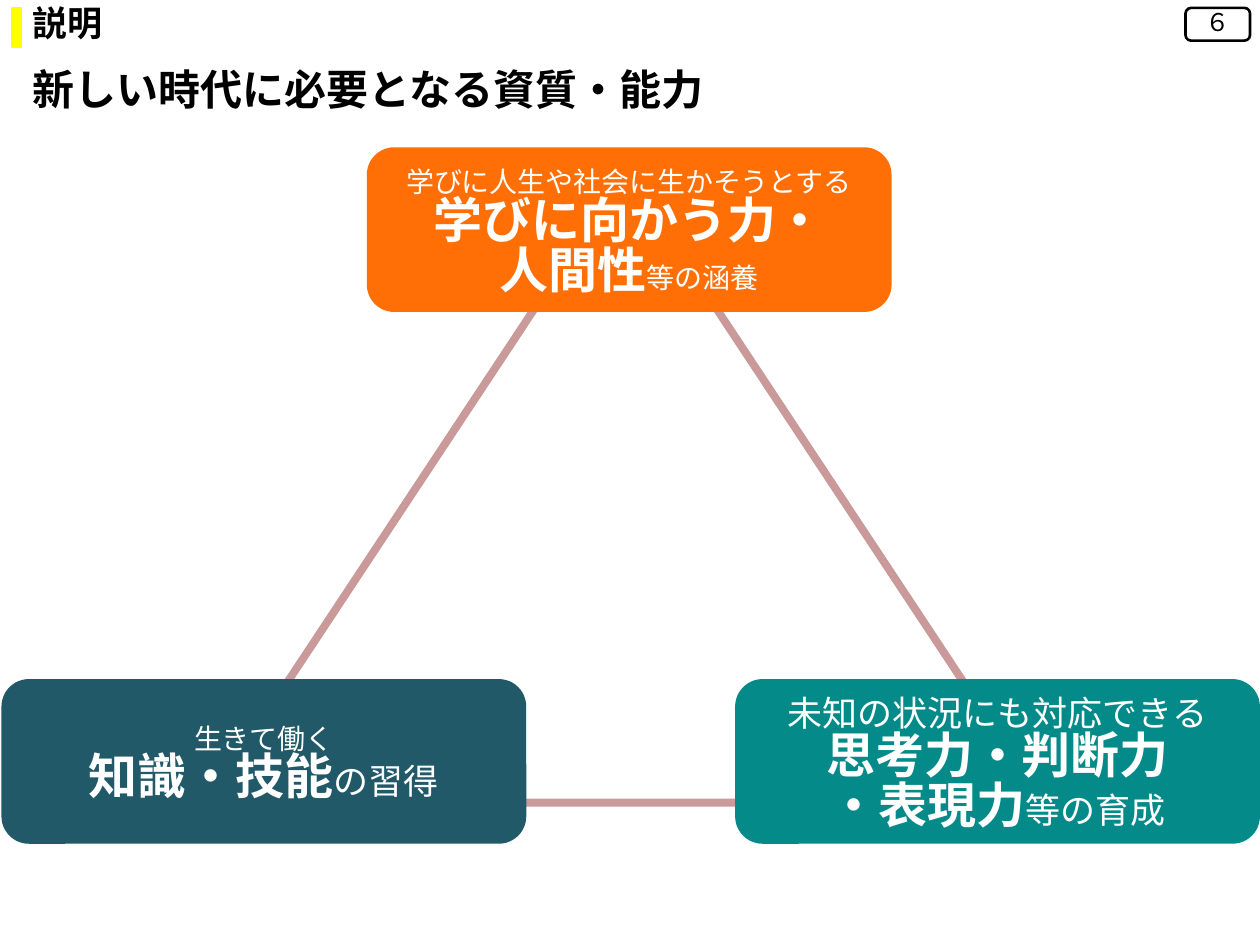
import lxml.etree
import pptx
import pptx.dml.color
import pptx.enum.shapes
import pptx.enum.text
import pptx.oxml.ns
import pptx.util

FONT = "Noto Sans CJK JP"
LINE_SPACING = 0.85
CARD_WIDTH, CARD_HEIGHT = 10.58, 3.32
SHAPES = pptx.enum.shapes.MSO_SHAPE
ANCHOR = pptx.enum.text.MSO_ANCHOR
ALIGN = pptx.enum.text.PP_ALIGN
Cm = pptx.util.Cm
qn = pptx.oxml.ns.qn


def color(hex_value):
    """Return an RGB colour for a hex string."""
    return pptx.dml.color.RGBColor.from_string(hex_value)


def write(frame, paragraphs, hex_value, align, anchor):
    """Fill a text frame with paragraphs of (text, size, bold) runs."""
    frame.word_wrap = True
    frame.auto_size = pptx.enum.text.MSO_AUTO_SIZE.NONE
    frame.vertical_anchor = anchor
    for index, runs in enumerate(paragraphs):
        paragraph = frame.add_paragraph() if index else frame.paragraphs[0]
        paragraph.alignment = align
        paragraph.line_spacing = LINE_SPACING
        for text, size, bold in runs:
            run = paragraph.add_run()
            run.text = text
            run.font.size = pptx.util.Pt(size)
            run.font.bold = bold
            run.font.color.rgb = color(hex_value)
            run.font.name = FONT
            lxml.etree.SubElement(
                run._r.get_or_add_rPr(), qn("a:ea"), typeface=FONT)


def add_box(slide, kind, box, fill=None, line=None, line_width=1):
    """Add a flat preset shape in a box given in centimetres."""
    shape = slide.shapes.add_shape(kind, *map(Cm, box))
    shape.shadow.inherit = False
    if fill:
        shape.fill.solid()
        shape.fill.fore_color.rgb = color(fill)
    else:
        shape.fill.background()
    if line:
        shape.line.color.rgb = color(line)
        shape.line.width = pptx.util.Pt(line_width)
    else:
        shape.line.fill.background()
    return shape


def add_header(slide, left, top, width):
    """Add the section label, its marker, the page number and the title."""
    label = slide.shapes.add_textbox(
        Cm(left + 0.15), Cm(top), Cm(6.12), Cm(1.12))
    write(label.text_frame, [[("説明", 20, True)]], "000000",
          ALIGN.LEFT, ANCHOR.TOP)
    add_box(slide, SHAPES.RECTANGLE, (left, top + 0.13, 0.18, 0.79),
            "FFFF00", "FFFF00")
    page_number = add_box(
        slide, SHAPES.ROUNDED_RECTANGLE,
        (left + width - 1.3, top + 0.13, 1.3, 0.66), "FFFFFF", "000000", 1.5)
    write(page_number.text_frame, [[("６", 14, False)]], "000000",
          ALIGN.CENTER, ANCHOR.MIDDLE)
    title = slide.shapes.title
    title.left, title.top = Cm(left + 0.15), Cm(top + 1.27)
    title.width, title.height = Cm(22.53), Cm(1.27)
    write(title.text_frame, [[("新しい時代に必要となる資質・能力", 24, True)]],
          "000000", ALIGN.LEFT, ANCHOR.TOP)


def add_card(slide, left, top, fill, paragraphs):
    """Add one rounded card describing a competency."""
    card = add_box(slide, SHAPES.ROUNDED_RECTANGLE,
                   (left, top, CARD_WIDTH, CARD_HEIGHT), fill)
    card.text_frame.margin_top = Cm(0.3)
    write(card.text_frame, paragraphs, "FFFFFF", ALIGN.CENTER, ANCHOR.MIDDLE)


def add_competency_triangle(slide, left, top, width, height):
    """Add the triangle and the three cards at its corners."""
    triangle = add_box(slide, SHAPES.ISOSCELES_TRIANGLE,
                       (left + 4.16, top + 0.48, 16.84, 12.73),
                       line="953735", line_width=4.5)
    line_color = triangle.line._ln.find(".//" + qn("a:srgbClr"))
    lxml.etree.SubElement(line_color, qn("a:alpha"), val="50000")
    right = left + width - CARD_WIDTH
    bottom = top + height - CARD_HEIGHT
    add_card(slide, (left + right) / 2 - 0.03, top, "FF6F05", [
        [("学びに人生や社会に生かそうとする", 16, False)],
        [("学びに向かう力・", 28, True)],
        [("人間性", 28, True), ("等の涵養", 16, False)]])
    add_card(slide, right, bottom, "058A8A", [
        [("未知の状況にも対応できる", 20, False)],
        [("思考力・判断力", 28, True)],
        [("・表現力", 28, True), ("等の育成", 20, False)]])
    add_card(slide, left, bottom, "215968", [
        [("生きて働く", 16, False)],
        [("知識・技能", 28, True), ("の習得", 20, False)]])


def main():
    """Build and save the slide."""
    presentation = pptx.Presentation()
    presentation.slide_width, presentation.slide_height = Cm(25.4), Cm(19.05)
    slide = presentation.slides.add_slide(presentation.slide_layouts[5])
    add_competency_triangle(slide, 0.03, 2.97, 25.37, 14.04)
    add_header(slide, 0.25, 0.03, 24.95)
    presentation.save("out.pptx")


if __name__ == "__main__":
    main()
